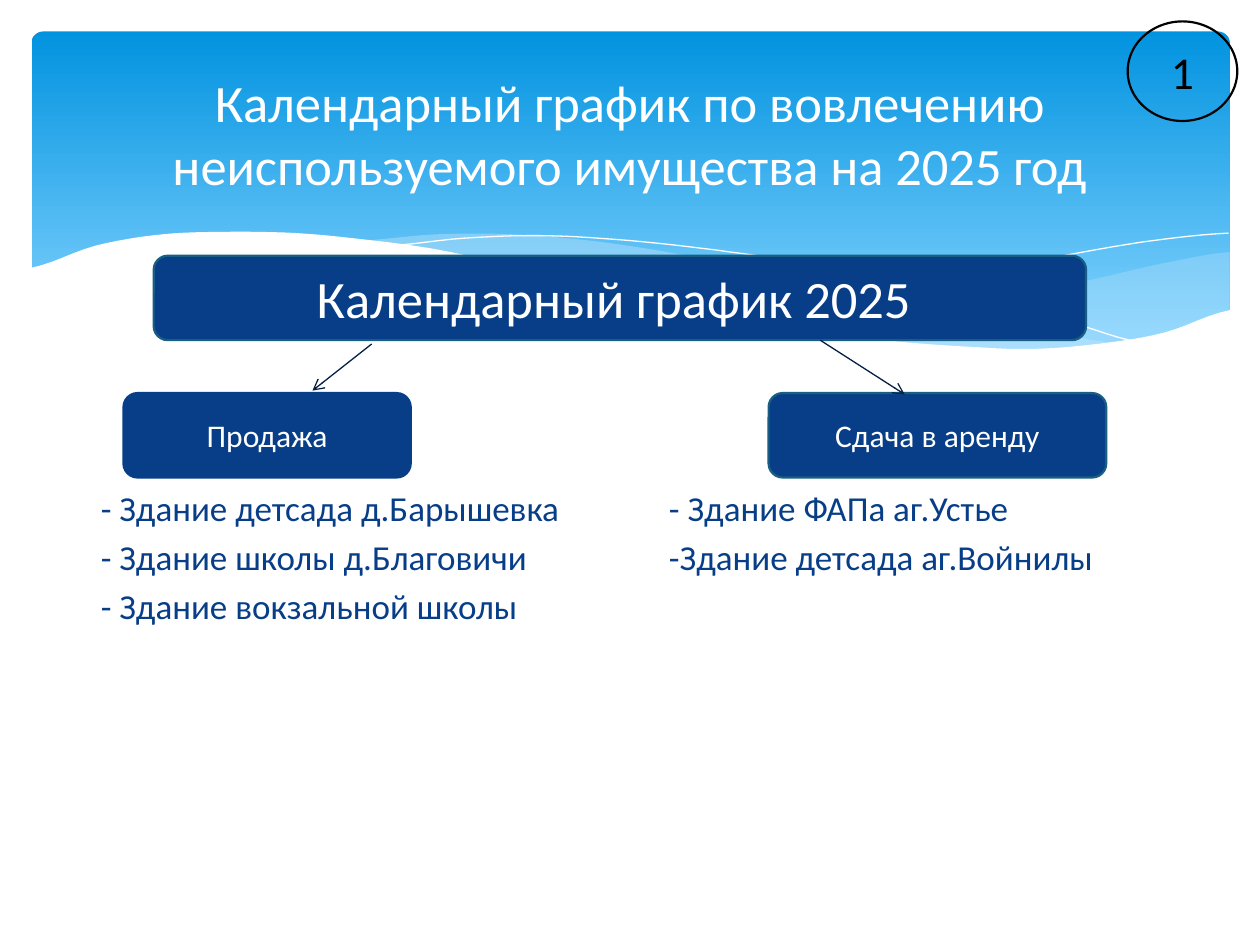
"""Build the slide with the 2025 calendar plan for unused property."""
from lxml import etree
from pptx import Presentation, util as u
from pptx.dml.color import RGBColor
from pptx.enum import shapes as es, text as et
from pptx.oxml import ns

HEX = {"navy": "073E87", "edge": "195F84", "arrow": "041F44", "white": "FFFFFF",
       "black": "000000", "sky": "0293E0", "pale": "83D3FE", "mist": "C6E7FC"}
HUES = {name: RGBColor.from_string(code) for name, code in HEX.items()}
FONT = "Calibri"
PARTS = 6
UNITS = 1000


def write(par, words, size, name):
    """Add one run of coloured text."""
    run = par.add_run()
    run.text = words
    run.font.size = u.Pt(size)
    run.font.name = FONT
    run.font.color.rgb = HUES[name]


def curve(left, right, heights):
    """Return a smooth line through heights set at equal steps from left to right."""
    last = len(heights) - 1
    points = []
    for num in range(last):
        a, b, c, d = (heights[min(max(num + k, 0), last)] for k in (-1, 0, 1, 2))
        for part in range(PARTS):
            t = part / PARTS
            y = b + t * (c - a) / 2 + t**2 * (2*a - 5*b + 4*c - d) / 2 + t**3 * (3*b - a - 3*c + d) / 2
            points.append((left + (right - left) * (num + t) / last, y))
    return points + [(right, heights[-1])]


deck = Presentation()
deck.slide_width, deck.slide_height = u.Inches(10), u.Inches(7.5)
slide = deck.slides.add_slide(deck.slide_layouts[5])
items = slide.shapes

band = items.add_shape(es.MSO_SHAPE.ROUNDED_RECTANGLE, u.Inches(0.25), u.Inches(0.25),
                       u.Inches(9.51), u.Inches(2.7))
band.adjustments[0] = 0.034
band.shadow.inherit = False
band.line.fill.background()
band.fill.gradient()
band.fill.gradient_angle = 270
for stop, name, place in zip(band.fill.gradient_stops, ("sky", "pale"), (0, 0.9)):
    stop.color.rgb = HUES[name]
    stop.position = place

fills = [
    {"left": 6.61, "right": 9.76, "hue": "mist", "alpha": 29,
     "top": [2.65, 2.56, 2.45, 2.33, 2.21, 2.09, 2],
     "base": [2.65, 2.71, 2.77, 2.78, 2.74, 2.65, 2.47]},
    {"left": 2.86, "right": 8.93, "hue": "mist", "alpha": 40,
     "top": [1.91, 1.86, 1.86, 1.91, 2, 2.12, 2.27, 2.41, 2.53, 2.64, 2.73],
     "base": [1.91, 2, 2.12, 2.26, 2.4, 2.53, 2.64, 2.72, 2.77, 2.78, 2.73]}]
lines = [
    {"left": 3.09, "right": 9.07,
     "top": [1.95, 1.89, 1.87, 1.9, 1.96, 2.04, 2.14, 2.26, 2.39, 2.55, 2.72]},
    {"left": 6.13, "right": 9.75, "top": [2.57, 2.41, 2.26, 2.13, 2.01, 1.91, 1.85]}]
front = {"left": 0.23, "right": 9.77, "hue": "white", "alpha": 100, "base": [3.29, 3.29],
         "top": [2.13, 1.95, 1.86, 1.84, 1.85, 1.9, 1.97, 2.08, 2.2, 2.32, 2.45, 2.55,
                 2.64, 2.71, 2.75, 2.77, 2.73, 2.64, 2.46]}
for wave in (*fills, *lines, front):
    solid = "base" in wave
    points = curve(wave["left"], wave["right"], wave["top"])
    if solid:
        points += reversed(curve(wave["left"], wave["right"], wave["base"]))
    first, *rest = [(x * UNITS, y * UNITS) for x, y in points]
    pen = items.build_freeform(*first, scale=u.Inches(1) / UNITS)
    pen.add_line_segments(rest, close=solid)
    form = pen.convert_to_shape()
    form.shadow.inherit = False
    if solid:
        form.line.fill.background()
        form.fill.solid()
        form.fill.fore_color.rgb = HUES[wave["hue"]]
        tint = form.element.spPr.find(ns.qn("a:solidFill"))[0]
        etree.SubElement(tint, ns.qn("a:alpha")).set("val", str(wave["alpha"] * 1000))
    else:
        form.fill.background()
        form.line.color.rgb = HUES["white"]
        form.line.width = u.Pt(0)

title = items.title
items.element.append(title.element)
title.left, title.top = u.Inches(0.5), u.Inches(0.37)
title.width, title.height = u.Inches(9), u.Inches(1.37)
title.text_frame.vertical_anchor = et.MSO_ANCHOR.MIDDLE
head = title.text_frame.paragraphs[0]
head.alignment = et.PP_ALIGN.CENTER
write(head, "Календарный график по вовлечению неиспользуемого имущества на 2025 год", 30, "white")

sales = ["- Здание детсада д.Барышевка", "- Здание школы д.Благовичи",
         "- Здание вокзальной школы"]
rents = ["- Здание ФАПа аг.Устье", "-Здание детсада аг.Войнилы"]
for left, rows in ((0.8, sales), (5.31, rents)):
    box = items.add_textbox(u.Inches(left), u.Inches(3.86), u.Inches(4.2), u.Inches(1.2))
    frame = box.text_frame
    frame.word_wrap = True
    frame.margin_left = frame.margin_right = frame.margin_top = frame.margin_bottom = 0
    for num, row in enumerate(rows):
        par = frame.add_paragraph() if num else frame.paragraphs[0]
        par.space_before = u.Pt(4 if num else 0)
        write(par, row, 20, "navy")

card, oval = es.MSO_SHAPE.FLOWCHART_ALTERNATE_PROCESS, es.MSO_SHAPE.OVAL
nodes = [
    (card, (1.22, 2.03, 7.4, 0.67), "navy", "edge", "Календарный график 2025 ", 30, "white"),
    (card, (0.98, 3.12, 2.28, 0.67), "navy", "navy", "Продажа", 18, "white"),
    (card, (6.1, 3.12, 2.68, 0.67), "navy", "edge", "Сдача в аренду", 18, "white"),
    (oval, (8.95, 0.17, 0.87, 0.79), None, "black", "1", 26, "black")]
for kind, place, fill, edge, words, size, ink in nodes:
    node = items.add_shape(kind, *map(u.Inches, place))
    node.shadow.inherit = False
    if fill:
        node.fill.solid()
        node.fill.fore_color.rgb = HUES[fill]
    else:
        node.fill.background()
    node.line.color.rgb = HUES[edge]
    node.line.width = u.Pt(1.25)
    node.text_frame.vertical_anchor = et.MSO_ANCHOR.MIDDLE
    par = node.text_frame.paragraphs[0]
    par.alignment = et.PP_ALIGN.CENTER
    write(par, words, size, ink)

for ends in ((6.51, 2.7, 7.18, 3.13), (2.95, 2.73, 2.48, 3.1)):
    link = items.add_connector(es.MSO_CONNECTOR.STRAIGHT, *map(u.Inches, ends))
    link.line.color.rgb = HUES["arrow"]
    link.line.width = u.Pt(0.75)
    props = link.element.spPr
    etree.SubElement(props.find(ns.qn("a:ln")), ns.qn("a:tailEnd")).set("type", "arrow")
    etree.SubElement(props, ns.qn("a:effectLst"))

deck.save("out.pptx")
